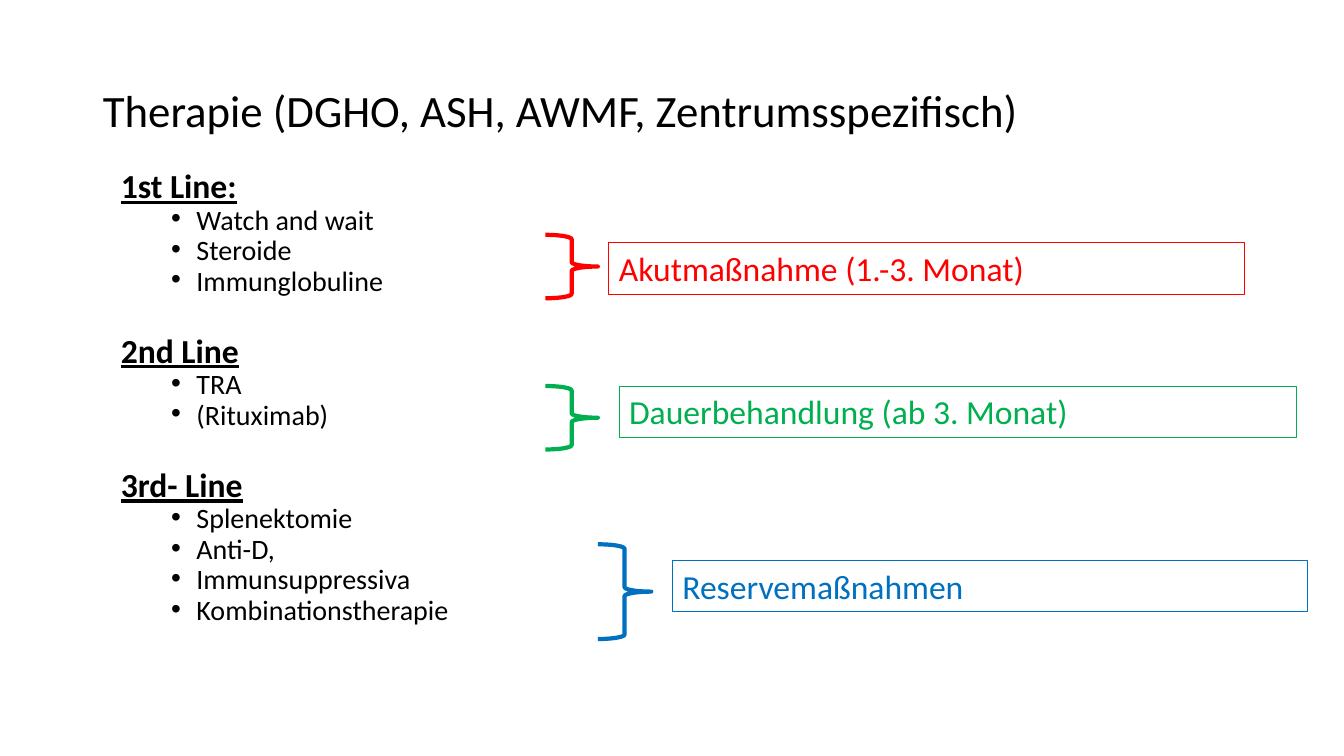
from lxml import etree
from pptx import Presentation
from pptx.dml.color import RGBColor
from pptx.enum.shapes import MSO_SHAPE
from pptx.enum.text import MSO_ANCHOR, MSO_AUTO_SIZE, PP_ALIGN
from pptx.oxml.ns import qn
from pptx.util import Inches, Pt

RECTANGLE, BRACE = MSO_SHAPE.RECTANGLE, MSO_SHAPE.RIGHT_BRACE
TOP, MIDDLE = MSO_ANCHOR.TOP, MSO_ANCHOR.MIDDLE
LEFT = PP_ALIGN.LEFT
NO_FIT = MSO_AUTO_SIZE.NONE
TITLE_ONLY = 5

BLACK = RGBColor(0x00, 0x00, 0x00)
RED = RGBColor(0xFF, 0x00, 0x00)
GREEN = RGBColor(0x00, 0xB0, 0x50)
BLUE = RGBColor(0x00, 0x70, 0xC0)

HEADING = {"size": Pt(24), "bold": True, "underline": True}
ITEM = {"size": Pt(20)}
GROUP_GAP = 32  # points above a heading that follows a list

THERAPY_LINES = [
    ("1st Line:", ["Watch and wait", "Steroide", "Immunglobuline"]),
    ("2nd Line", ["TRA", "(Rituximab)"]),
    ("3rd- Line", ["Splenektomie", "Anti-D,", "Immunsuppressiva",
                   "Kombinationstherapie"]),
]

# Label, colour, brace area, label area
PHASES = [
    ("Akutmaßnahme (1.-3. Monat)", RED,
     (5.41, 2.33, 0.52, 0.63), (6.04, 2.41, 6.3, 0.51)),
    ("Dauerbehandlung (ab 3. Monat)", GREEN,
     (5.41, 3.83, 0.52, 0.63), (6.14, 3.83, 6.72, 0.51)),
    ("Reservemaßnahmen", BLUE,
     (5.93, 5.4, 0.53, 0.94), (6.67, 5.56, 6.3, 0.51)),
]


def set_values(target, values):
    for name, value in values.items():
        setattr(target, name, value)


class SlideBuilder:
    font = "Calibri"

    def __init__(self, page):
        self.page = page

    def add_span(self, para, text, color=BLACK, **values):
        span = para.add_run()
        span.text = text
        set_values(span.font, {"name": self.font, **values})
        span.font.color.rgb = color

    def frame(self, box, anchor):
        set_values(box.text_frame, {"word_wrap": True, "auto_size": NO_FIT,
                                    "vertical_anchor": anchor})
        return box.text_frame.paragraphs[0]

    def title(self, text, area):
        box = self.page.shapes.title
        set_values(box, dict(zip(("left", "top", "width", "height"),
                                 map(Inches, area))))
        para = self.frame(box, MIDDLE)
        set_values(para, {"alignment": LEFT, "line_spacing": 0.9})
        self.add_span(para, text, size=Pt(32))

    def list_line(self, para, text, indent, before, style, bullet=None):
        set_values(para, {"line_spacing": 0.7, "space_before": Pt(before)})
        properties = para._p.get_or_add_pPr()
        properties.set("marL", str(Inches(indent)))
        properties.set("indent", str(Inches(-0.25)))
        if bullet:
            font = etree.SubElement(properties, qn("a:buFont"))
            font.set("typeface", "Arial")
            mark = etree.SubElement(properties, qn("a:buChar"))
            mark.set("char", bullet)
        self.add_span(para, text, **style)

    def grouped_list(self, groups, area):
        box = self.page.shapes.add_textbox(*map(Inches, area))
        para = self.frame(box, TOP)
        for number, (heading, items) in enumerate(groups):
            if number:
                para = box.text_frame.add_paragraph()
            before = GROUP_GAP if number else 10
            self.list_line(para, heading, 0.25, before, HEADING)
            for item in items:
                para = box.text_frame.add_paragraph()
                para.level = 1
                self.list_line(para, item, 0.75, 5, ITEM, "•")

    def outline(self, kind, area, color, width):
        shape = self.page.shapes.add_shape(kind, *map(Inches, area))
        shape.shadow.inherit = False
        shape.fill.background()
        shape.line.color.rgb = color
        shape.line.width = Pt(width)
        return shape

    def label(self, text, area, color):
        box = self.outline(RECTANGLE, area, color, 0.75)
        para = self.frame(box, TOP)
        para.alignment = LEFT
        self.add_span(para, text, color, size=Pt(24))


def main():
    deck = Presentation()
    deck.slide_width, deck.slide_height = Inches(13.33), Inches(7.5)
    builder = SlideBuilder(deck.slides.add_slide(deck.slide_layouts[TITLE_ONLY]))

    # Title and therapy lines
    builder.title("Therapie (DGHO, ASH, AWMF, Zentrumsspezifisch)",
                  (0.92, 0.4, 11.5, 1.45))
    builder.grouped_list(THERAPY_LINES, (1.1, 1.7, 11.46, 4.95))

    # Braces with their treatment phases
    for text, color, brace_area, label_area in PHASES:
        builder.outline(BRACE, brace_area, color, 3)
        builder.label(text, label_area, color)

    deck.save("out.pptx")


if __name__ == "__main__":
    main()
